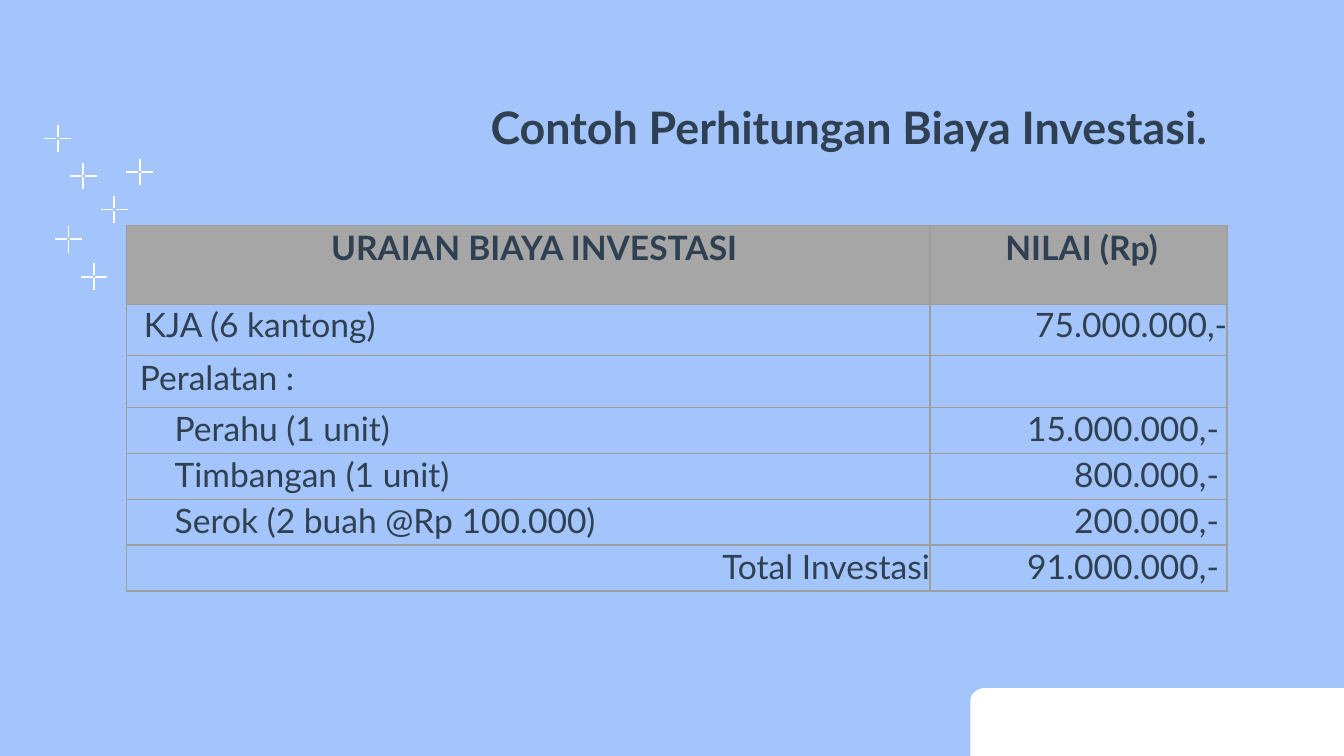
import pptx
import pptx.util
import pptx.dml.color
import pptx.enum.shapes
import pptx.enum.text
import pptx.oxml.ns
import lxml.etree

Inches, Pt = pptx.util.Inches, pptx.util.Pt
RGBColor = pptx.dml.color.RGBColor
ALIGN = pptx.enum.text.PP_ALIGN

SKY = RGBColor(0xA4, 0xC5, 0xFB)
WHITE = RGBColor(0xFF, 0xFF, 0xFF)
INK = RGBColor(0x2F, 0x40, 0x52)
HEADER_GREY = RGBColor(0xA6, 0xA6, 0xA6)
BORDER_GREY = RGBColor(0x9E, 0x9E, 0x9E)
FONT = "Lato"
WIDTH = 10
HEIGHT = WIDTH * 9 / 16
UNITS_PER_INCH = 1000

TITLE = "Contoh Perhitungan Biaya Investasi."
TABLE_WIDTH, TABLE_HEIGHT = 8.19, 2.72
COLUMN_SHARES = [5.98, 2.21]
LEFT, CENTER, RIGHT = ALIGN.LEFT, ALIGN.CENTER, ALIGN.RIGHT
# Row share of the height, then per cell: text, alignment, left inset, right inset
ROWS = [
    (0.58, ("URAIAN BIAYA INVESTASI", CENTER, 0.09, 0), ("NILAI (Rp)", LEFT, 0.56, 0)),
    (0.38, ("KJA (6 kantong)", LEFT, 0.13, 0), ("75.000.000,-", RIGHT, 0, 0)),
    (0.38, ("Peralatan :", LEFT, 0.1, 0), ("", RIGHT, 0, 0)),
    (0.34, ("Perahu (1 unit)", LEFT, 0.36, 0), ("15.000.000,-", RIGHT, 0, 0.06)),
    (0.34, ("Timbangan (1 unit)", LEFT, 0.36, 0), ("800.000,-", RIGHT, 0, 0.06)),
    (0.34, ("Serok (2 buah @Rp 100.000)", LEFT, 0.36, 0), ("200.000,-", RIGHT, 0, 0.06)),
    (0.34, ("Total Investasi", RIGHT, 0, 0), ("91.000.000,-", RIGHT, 0, 0.06)),
]
SPARKLE_CENTERS = [(0.51, 1.78), (0.7, 2.06), (1.04, 1.28),
                   (0.85, 1.56), (0.43, 1.03), (0.62, 1.31)]
SPARKLE_REACH, SPARKLE_GAP = 0.1, 0.01
TAB_LEFT, TAB_TOP = 7.22, 5.12


def add_run(p, text, size, bold):
    r = p.add_run()
    r.text = text
    r.font.name = FONT
    r.font.size = Pt(size)
    r.font.bold = bold
    r.font.color.rgb = INK


def add_outline(slide, contours, close):
    """Draw one freeform from lists of points in inches."""
    contours = [[(x * UNITS_PER_INCH, y * UNITS_PER_INCH) for x, y in contour]
                for contour in contours]
    builder = slide.shapes.build_freeform(
        *contours[0][0], scale=Inches(1) / UNITS_PER_INCH)
    for i, (start, *rest) in enumerate(contours):
        if i:
            builder.move_to(*start)
        builder.add_line_segments(rest, close=close)
    s = builder.convert_to_shape()
    s.shadow.inherit = False
    return s


def add_sparkle(slide, x, y):
    arms = [[(x + dx * d, y + dy * d) for d in (SPARKLE_GAP, SPARKLE_REACH)]
            for dx, dy in ((0, -1), (0, 1), (-1, 0), (1, 0))]
    s = add_outline(slide, arms, close=False)
    s.fill.background()
    s.line.color.rgb = WHITE
    s.line.width = Pt(0.85)


def add_corner_tab(slide):
    """White panel at the bottom right with a rounded top-left corner."""
    corner = [(0.09, 0), (0.06, 0.01), (0.03, 0.03), (0.01, 0.05), (0, 0.09)]
    points = [(WIDTH, TAB_TOP)]
    points += [(TAB_LEFT + dx, TAB_TOP + dy) for dx, dy in corner]
    points += [(TAB_LEFT, HEIGHT), (WIDTH, HEIGHT)]
    s = add_outline(slide, [points], close=True)
    s.fill.solid()
    s.fill.fore_color.rgb = WHITE
    s.line.fill.background()


def add_borders(cell):
    qn = pptx.oxml.ns.qn
    tc_pr = cell._tc.get_or_add_tcPr()
    for side in ("a:lnL", "a:lnR", "a:lnT", "a:lnB"):
        ln = lxml.etree.SubElement(tc_pr, qn(side), w=str(Pt(0.75)))
        fill = lxml.etree.SubElement(ln, qn("a:solidFill"))
        lxml.etree.SubElement(fill, qn("a:srgbClr"), val=str(BORDER_GREY))


def add_cost_table(slide):
    table = slide.shapes.add_table(
        len(ROWS), len(COLUMN_SHARES), Inches(0.94), Inches(1.68),
        Inches(TABLE_WIDTH), Inches(TABLE_HEIGHT)).table
    for column, share in zip(table.columns, COLUMN_SHARES):
        column.width = Inches(TABLE_WIDTH * share / sum(COLUMN_SHARES))
    total_share = sum(row[0] for row in ROWS)
    for i, (share, *cells) in enumerate(ROWS):
        table.rows[i].height = Inches(TABLE_HEIGHT * share / total_share)
        for j, (text, align, left, right) in enumerate(cells):
            cell = table.cell(i, j)
            cell.margin_left, cell.margin_right = Inches(left), Inches(right)
            cell.margin_top = Inches(0 if i == 1 else 0.01)
            cell.margin_bottom = 0
            add_borders(cell)
            cell.fill.solid()
            cell.fill.fore_color.rgb = HEADER_GREY if i == 0 else SKY
            p = cell.text_frame.paragraphs[0]
            p.alignment = align
            if text:
                add_run(p, text, 18, bold=i == 0)


def add_title(slide):
    s = slide.shapes.title
    s.left, s.top, s.width, s.height = map(Inches, (3.64, 0.73, 5.4, 0.43))
    tf = s.text_frame
    tf.margin_left = tf.margin_top = Inches(0.01)
    tf.margin_right = tf.margin_bottom = 0
    tf.vertical_anchor = pptx.enum.text.MSO_ANCHOR.TOP
    tf.auto_size = pptx.enum.text.MSO_AUTO_SIZE.SHAPE_TO_FIT_TEXT
    p = tf.paragraphs[0]
    p.alignment = LEFT
    add_run(p, TITLE, 24, bold=True)


def main():
    prs = pptx.Presentation()
    prs.slide_width, prs.slide_height = Inches(WIDTH), Inches(HEIGHT)
    slide = prs.slides.add_slide(prs.slide_layouts[5])
    slide.background.fill.solid()
    slide.background.fill.fore_color.rgb = SKY
    for x, y in SPARKLE_CENTERS:
        add_sparkle(slide, x, y)
    add_corner_tab(slide)
    add_title(slide)
    add_cost_table(slide)
    prs.save("out.pptx")


if __name__ == "__main__":
    main()
